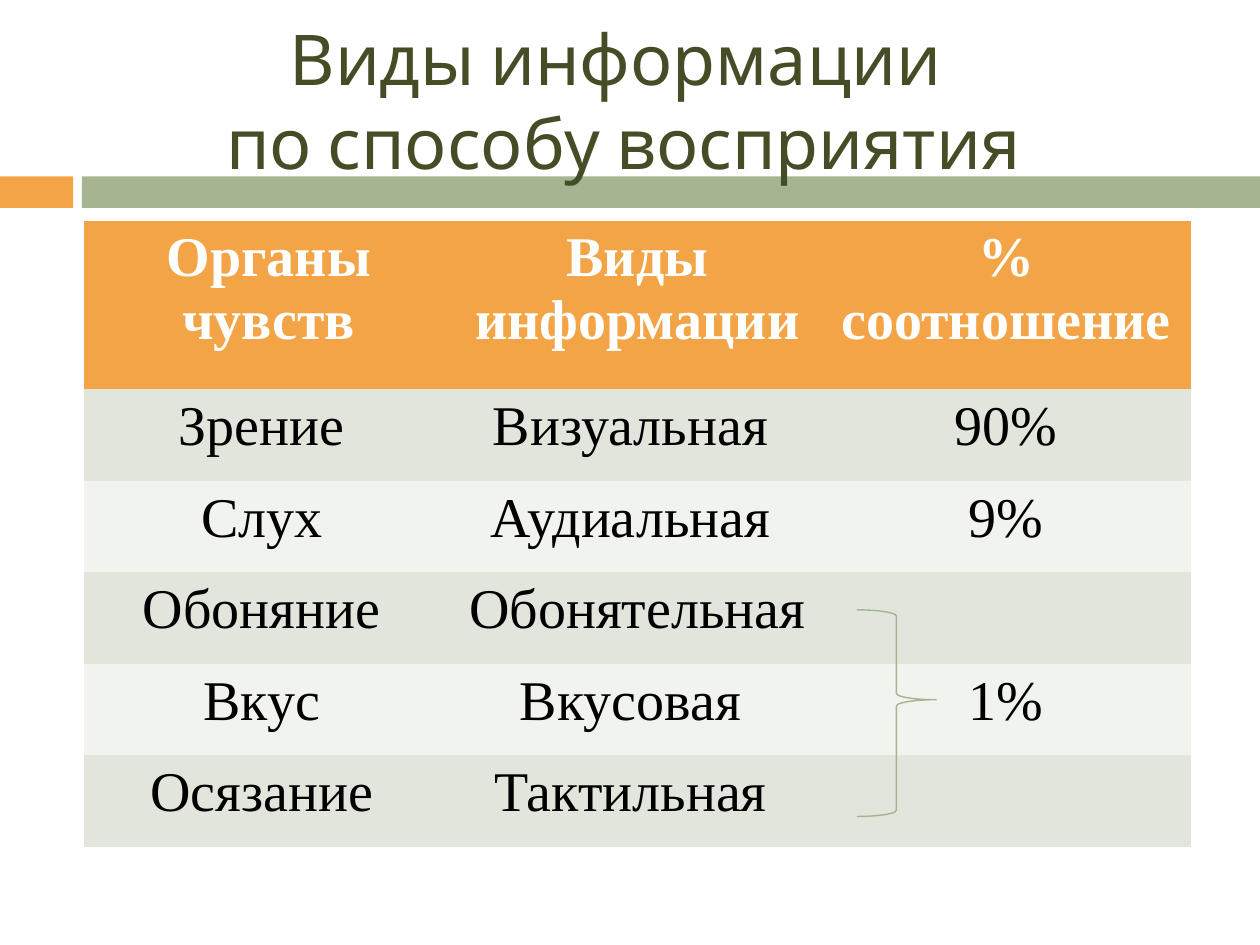
from pptx import Presentation
from pptx.dml.color import RGBColor
from pptx.enum.shapes import MSO_SHAPE
from pptx.enum.text import MSO_ANCHOR, MSO_AUTO_SIZE, PP_ALIGN
from pptx.oxml.ns import qn
from pptx.util import Inches, Pt

TITLE_LINES = ["Виды информации", " по способу восприятия"]
HEADER = ["Органы чувств", "Виды информации", "% соотношение"]
SENSES = [
    ["Зрение ", "Визуальная ", "90%"],
    ["Слух ", "Аудиальная ", "9%"],
    ["Обоняние ", "Обонятельная ", ""],
    ["Вкус ", "Вкусовая ", "1%"],
    ["Осязание ", "Тактильная ", ""],
]
THEME = {
    "orange": RGBColor.from_string("F3A447"),
    "green": RGBColor.from_string("A5B592"),
    "title": RGBColor.from_string("444D26"),
    "header text": RGBColor.from_string("FFFFFF"),
    "body text": RGBColor.from_string("000000"),
    "bands": [RGBColor.from_string("E1E5DC"), RGBColor.from_string("F0F3EE")],
    "title font": "Cabin",
    "table font": "Times New Roman",
    "title size": Pt(40),
    "table size": Pt(32),
}
PLAIN_TABLE_STYLE = "{2D5ABB26-0587-4C30-8999-92F81FD0307C}"
BAR_TOP, BAR_HEIGHT = 1.4, 0.25
BARS = [(0, 0.58, "orange"), (0.65, 9.35, "green")]
TABLE_LEFT, TABLE_TOP, TABLE_WIDTH = 0.67, 1.75, 8.78
HEADER_HEIGHT, ROW_HEIGHT = 1.34, 0.726


def add_run(paragraph, text, font_name, size, color, bold=False):
    run = paragraph.add_run()
    run.text = text
    run.font.name = font_name
    run.font.size = size
    run.font.color.rgb = color
    run.font.bold = bold


def add_title(slide):
    title = slide.shapes.title
    title.left, title.top = Inches(0), Inches(0.25)
    title.width, title.height = Inches(9.77), Inches(1.08)
    frame = title.text_frame
    frame.word_wrap = True
    frame.auto_size = MSO_AUTO_SIZE.NONE
    frame.vertical_anchor = MSO_ANCHOR.MIDDLE
    paragraph = frame.paragraphs[0]
    paragraph.alignment = PP_ALIGN.CENTER
    for index, line in enumerate(TITLE_LINES):
        if index:
            paragraph.add_line_break()
        add_run(paragraph, line, THEME["title font"], THEME["title size"], THEME["title"])


def add_bars(slide):
    for left, width, color in BARS:
        bar = slide.shapes.add_shape(
            MSO_SHAPE.RECTANGLE, Inches(left), Inches(BAR_TOP), Inches(width), Inches(BAR_HEIGHT)
        )
        bar.shadow.inherit = False
        bar.fill.solid()
        bar.fill.fore_color.rgb = THEME[color]
        bar.line.fill.background()
        slide.shapes.title.element.addprevious(bar.element)


def add_senses_table(slide):
    rows = [HEADER] + SENSES
    height = HEADER_HEIGHT + ROW_HEIGHT * len(SENSES)
    frame = slide.shapes.add_table(
        len(rows), len(HEADER),
        Inches(TABLE_LEFT), Inches(TABLE_TOP), Inches(TABLE_WIDTH), Inches(height),
    )
    table = frame.table
    frame.element.find(".//" + qn("a:tableStyleId")).text = PLAIN_TABLE_STYLE
    for row_index, texts in enumerate(rows):
        is_header = row_index == 0
        table.rows[row_index].height = Inches(HEADER_HEIGHT if is_header else ROW_HEIGHT)
        fill = THEME["orange"] if is_header else THEME["bands"][(row_index - 1) % 2]
        color = THEME["header text"] if is_header else THEME["body text"]
        for column_index, text in enumerate(texts):
            cell = table.cell(row_index, column_index)
            cell.fill.solid()
            cell.fill.fore_color.rgb = fill
            paragraph = cell.text_frame.paragraphs[0]
            paragraph.alignment = PP_ALIGN.CENTER
            if text:
                add_run(paragraph, text, THEME["table font"], THEME["table size"], color, is_header)


def add_brace(slide):
    brace = slide.shapes.add_shape(
        MSO_SHAPE.RIGHT_BRACE, Inches(6.8), Inches(4.84), Inches(0.63), Inches(1.64)
    )
    brace.adjustments[0] = 0.08
    brace.adjustments[1] = 0.435
    brace.shadow.inherit = False
    brace.fill.background()
    brace.line.color.rgb = THEME["green"]
    brace.line.width = Pt(0.79)


def main():
    presentation = Presentation()
    presentation.slide_width, presentation.slide_height = Inches(10), Inches(7.5)
    slide = presentation.slides.add_slide(presentation.slide_layouts[5])
    add_title(slide)
    add_bars(slide)
    add_senses_table(slide)
    add_brace(slide)
    presentation.save("out.pptx")


if __name__ == "__main__":
    main()
